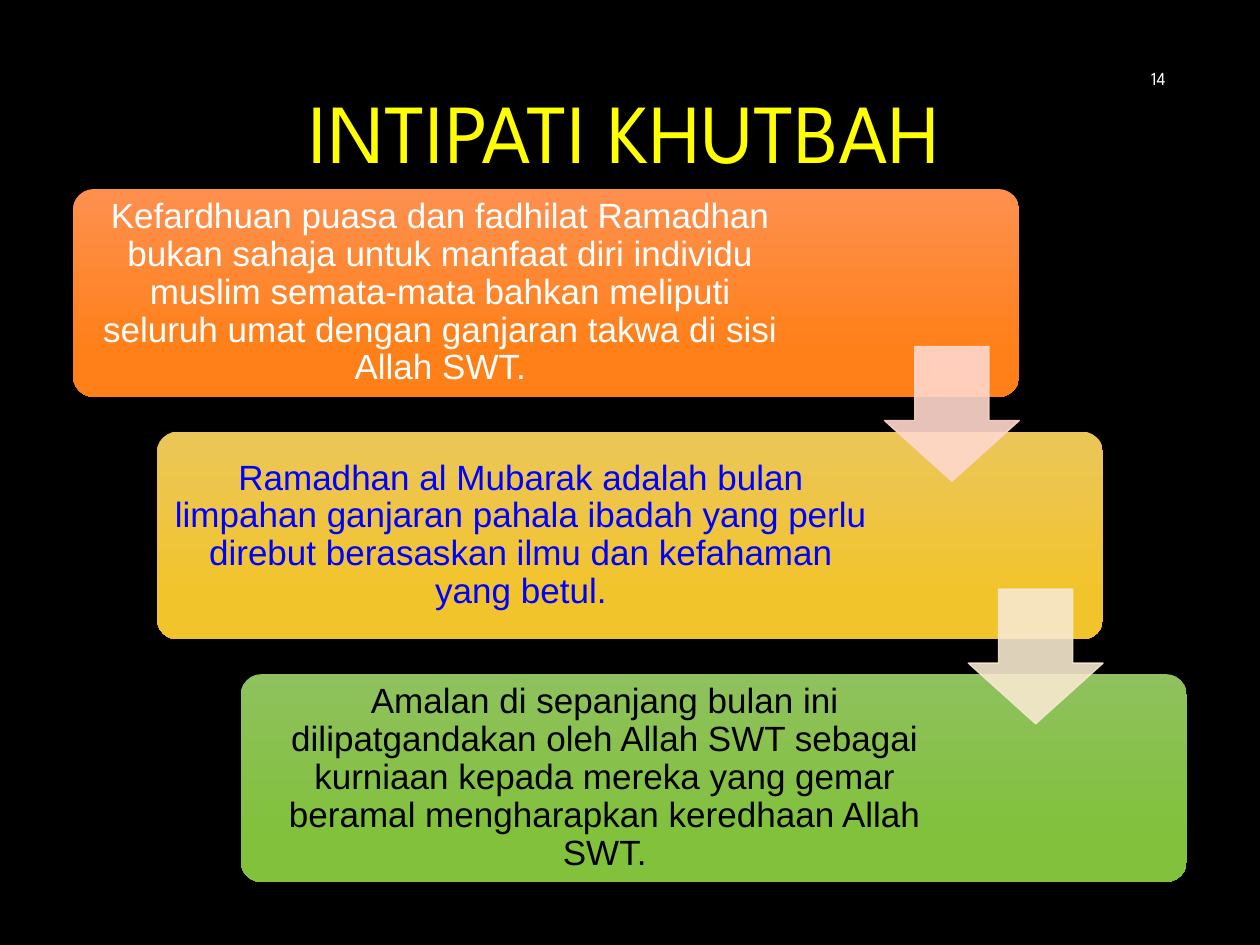
from lxml.etree import SubElement
from pptx import Presentation
from pptx.dml.color import RGBColor
from pptx.enum.shapes import MSO_SHAPE as Shape
from pptx.enum.text import MSO_ANCHOR as Anchor, PP_ALIGN as Align
from pptx.oxml.ns import qn
from pptx.util import Inches, Pt

BLACK = RGBColor(0, 0, 0)
WHITE = RGBColor(255, 255, 255)
YELLOW = RGBColor(255, 255, 0)
BLUE = RGBColor(0, 0, 255)
PEACH = RGBColor(0xFF, 0xD8, 0xCD)
CREAM = RGBColor(0xF7, 0xE8, 0xCE)
ORANGE = RGBColor(0xFE, 0x90, 0x4F), RGBColor(0xFF, 0x80, 0x19)
GOLD = RGBColor(0xEB, 0xC6, 0x59), RGBColor(0xF2, 0xC4, 0x2C)
GREEN = RGBColor(0x8F, 0xC1, 0x5E), RGBColor(0x81, 0xC1, 0x3C)

HEAD_FONT = "League Spartan"
BODY_FONT = "Arial"

# Stair of bars, in inches
LEFT, TOP = 0.58, 1.5
WIDE, HIGH = 7.51, 1.65
STEP_X, STEP_Y = 0.665, 1.925
PAD = 0.05
ARROW = 1.07
DROP = 1.25

# Text, text width, text colour, bar gradient, colour of the arrow below
STEPS = [
    ("Kefardhuan puasa dan fadhilat Ramadhan bukan sahaja untuk manfaat diri "
     "individu muslim semata-mata bahkan meliputi seluruh umat dengan ganjaran "
     "takwa di sisi Allah SWT.", 5.73, WHITE, ORANGE, PEACH),
    ("Ramadhan al Mubarak adalah bulan limpahan ganjaran pahala ibadah yang "
     "perlu direbut berasaskan ilmu dan kefahaman yang betul.",
     5.68, BLUE, GOLD, CREAM),
    ("Amalan di sepanjang bulan ini dilipatgandakan oleh Allah SWT sebagai "
     "kurniaan kepada mereka yang gemar beramal mengharapkan keredhaan Allah "
     "SWT.", 5.68, BLACK, GREEN, None),
]


def box(*sizes):
    return [Inches(size) for size in sizes]


def write(frame, text, font, size, color, align):
    frame.text = text
    para = frame.paragraphs[0]
    para.alignment = align
    style = para.runs[0].font
    style.name, style.size = font, Pt(size)
    style.color.rgb = color
    return para


def add_title(slide, text):
    title = slide.shapes.title
    title.left, title.top, title.width, title.height = box(2.05, 0.58, 5.82, 0.91)
    frame = title.text_frame
    frame.word_wrap = False
    frame.vertical_anchor = Anchor.TOP
    write(frame, text, HEAD_FONT, 48, YELLOW, Align.CENTER)


def add_number(slide, text):
    frame = slide.shapes.add_textbox(*box(7.19, 0.42, 2.16, 0.4)).text_frame
    frame.word_wrap = True
    frame.vertical_anchor = Anchor.MIDDLE
    write(frame, text, HEAD_FONT, 10.5, WHITE, Align.RIGHT)


def add_bar(slide, x, y, colors):
    bar = slide.shapes.add_shape(Shape.ROUNDED_RECTANGLE, *box(x, y, WIDE, HIGH))
    bar.adjustments[0] = 0.1
    bar.shadow.inherit = False
    bar.line.fill.background()
    bar.fill.gradient()
    bar.fill.gradient_angle = 270
    for stop, color, place in zip(bar.fill.gradient_stops, colors, (0, 0.78)):
        stop.color.rgb = color
        stop.position = place


def add_label(slide, x, y, width, text, color):
    label = slide.shapes.add_textbox(
        *box(x + PAD, y + PAD, width, HIGH - 2 * PAD))
    frame = label.text_frame
    frame.word_wrap = True
    frame.vertical_anchor = Anchor.MIDDLE
    frame.margin_left = frame.margin_right = Inches(0.08)
    frame.margin_top = frame.margin_bottom = Inches(0.08)
    para = write(frame, text, BODY_FONT, 20, color, Align.CENTER)
    para.line_spacing = 0.9


def add_arrow(slide, x, y, color):
    arrow = slide.shapes.add_shape(Shape.DOWN_ARROW, *box(x, y, ARROW, ARROW))
    arrow.adjustments[0] = 0.55
    arrow.adjustments[1] = 0.45
    arrow.shadow.inherit = False
    arrow.line.width = Pt(0.75)
    for fill in (arrow.fill, arrow.line.fill):
        fill.solid()
        fill.fore_color.rgb = color
    # Both fill and outline are slightly see-through
    for tint in arrow.element.spPr.iter(qn("a:srgbClr")):
        SubElement(tint, qn("a:alpha")).set("val", "90000")


def main():
    deck = Presentation()
    deck.slide_width, deck.slide_height = box(10, 7.5)
    slide = deck.slides.add_slide(deck.slide_layouts[5])
    slide.background.fill.solid()
    slide.background.fill.fore_color.rgb = BLACK

    add_title(slide, "INTIPATI KHUTBAH")
    add_number(slide, "14")

    # Bars with their text
    spots = [(LEFT + i * STEP_X, TOP + i * STEP_Y) for i in range(len(STEPS))]
    for (x, y), (text, width, ink, colors, _) in zip(spots, STEPS):
        add_bar(slide, x, y, colors)
        add_label(slide, x, y, width, text, ink)

    # Arrows lie over the bars, flush with each bar's right edge
    for (x, y), (*_, color) in zip(spots, STEPS):
        if color is not None:
            add_arrow(slide, x + WIDE - ARROW, y + DROP, color)

    deck.save("out.pptx")


if __name__ == "__main__":
    main()
